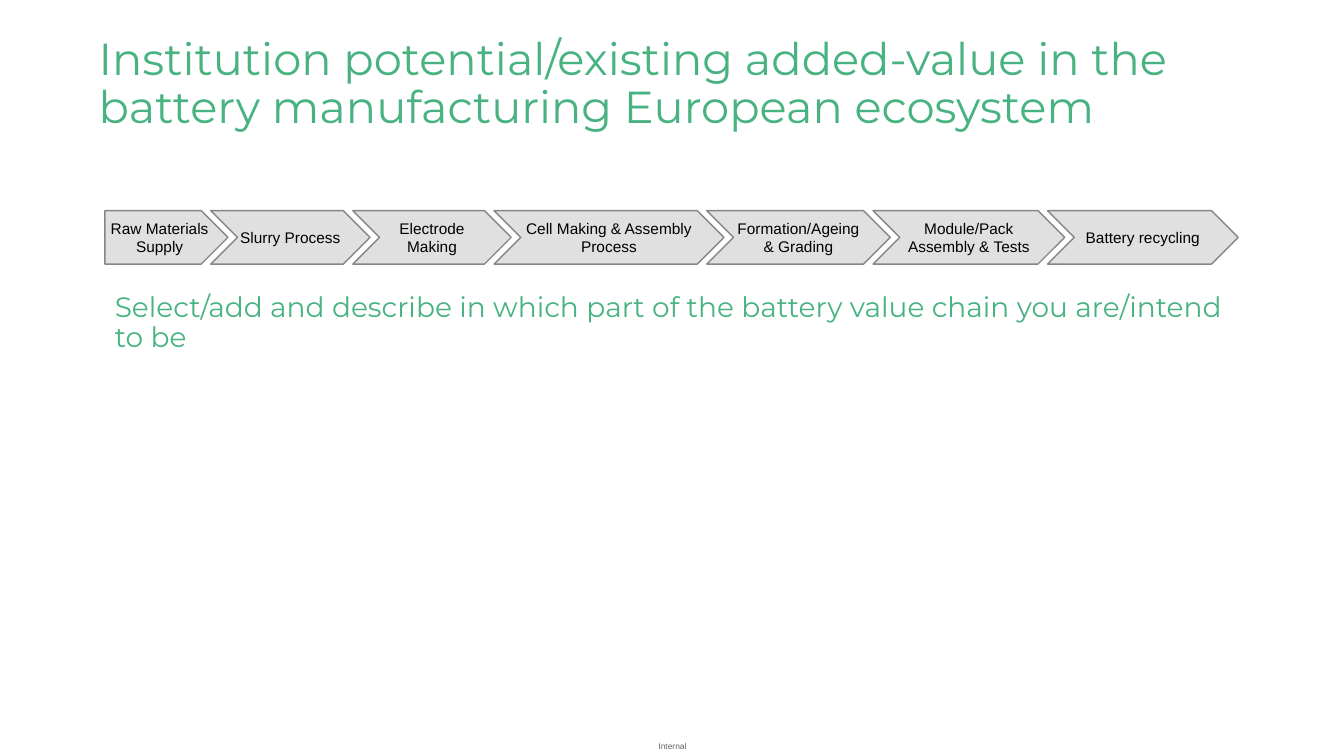
from dataclasses import dataclass

from pptx import Presentation
from pptx.dml.color import RGBColor
from pptx.enum.shapes import MSO_SHAPE
from pptx.enum.text import MSO_ANCHOR, PP_ALIGN
from pptx.util import Inches, Pt

TITLE = "Institution potential/existing added-value in the battery manufacturing European ecosystem"
PROMPT = "Select/add and describe in which part of the battery value chain you are/intend to be"
LABEL = "Internal"
STEPS = [
    ("Raw Materials\vSupply", 1.05),
    ("Slurry Process", 1.41),
    ("Electrode\vMaking", 1.4),
    ("Cell Making & Assembly\vProcess", 2.11),
    ("Formation/Ageing\v& Grading", 1.65),
    ("Module/Pack\vAssembly & Tests", 1.73),
    ("Battery recycling", 1.72),
]


@dataclass(frozen=True)
class Theme:
    heading: str = "Montserrat"
    body: str = "Arial"
    green: str = "48B381"
    gray: str = "626469"
    fill: str = "E0E0E0"
    line: str = "868686"
    black: str = "000000"
    title_pt: int = 32
    prompt_pt: int = 20
    step_pt: int = 11
    label_pt: int = 6


T = Theme()
WIDTH, HEIGHT = 13.33, 7.5
LEFT, STEP_TOP, STEP_HEIGHT, OVERLAP = 1.04, 2.09, 0.53, 0.17


def write(shape, text, font, size, color, align=PP_ALIGN.LEFT,
          anchor=MSO_ANCHOR.MIDDLE, inset=None, wrap=True, spacing=None):
    tf = shape.text_frame
    tf.text = text
    tf.word_wrap = wrap
    tf.vertical_anchor = anchor
    if inset is not None:
        tf.margin_left = tf.margin_right = Inches(inset)
        tf.margin_top = tf.margin_bottom = Inches(inset)
    p = tf.paragraphs[0]
    p.alignment = align
    p.line_spacing = spacing
    for r in p.runs:
        r.font.name = font
        r.font.size = Pt(size)
        r.font.color.rgb = RGBColor.from_string(color)


def add_text(s, box, *args, **kwargs):
    write(s.shapes.add_textbox(*map(Inches, box)), *args, **kwargs)


def add_step(s, kind, left, width, text):
    sp = s.shapes.add_shape(kind, *map(Inches, (left, STEP_TOP, width, STEP_HEIGHT)))
    sp.shadow.inherit = False
    sp.fill.solid()
    sp.fill.fore_color.rgb = RGBColor.from_string(T.fill)
    sp.line.color.rgb = RGBColor.from_string(T.line)
    sp.line.width = Pt(1)
    write(sp, text, T.body, T.step_pt, T.black, PP_ALIGN.CENTER, inset=0.08, wrap=False)


def main():
    prs = Presentation()
    prs.slide_width, prs.slide_height = Inches(WIDTH), Inches(HEIGHT)
    s = prs.slides.add_slide(prs.slide_layouts[6])

    add_text(s, (6.42, 7.3, 0.5, 0.2), LABEL, T.body, T.label_pt, T.gray,
             PP_ALIGN.CENTER, inset=0)
    add_text(s, (0.88, 0.12, 11.5, 1.45), TITLE, T.heading, T.title_pt, T.green,
             spacing=0.9)
    add_text(s, (LEFT, 2.86, 11.5, 1), PROMPT, T.heading, T.prompt_pt, T.green,
             anchor=MSO_ANCHOR.TOP, spacing=0.9)

    left = LEFT
    for i, (text, pitch) in enumerate(STEPS):
        kind = MSO_SHAPE.CHEVRON if i else MSO_SHAPE.PENTAGON
        add_step(s, kind, left, pitch + OVERLAP, text)
        left += pitch

    prs.save("out.pptx")


if __name__ == "__main__":
    main()
